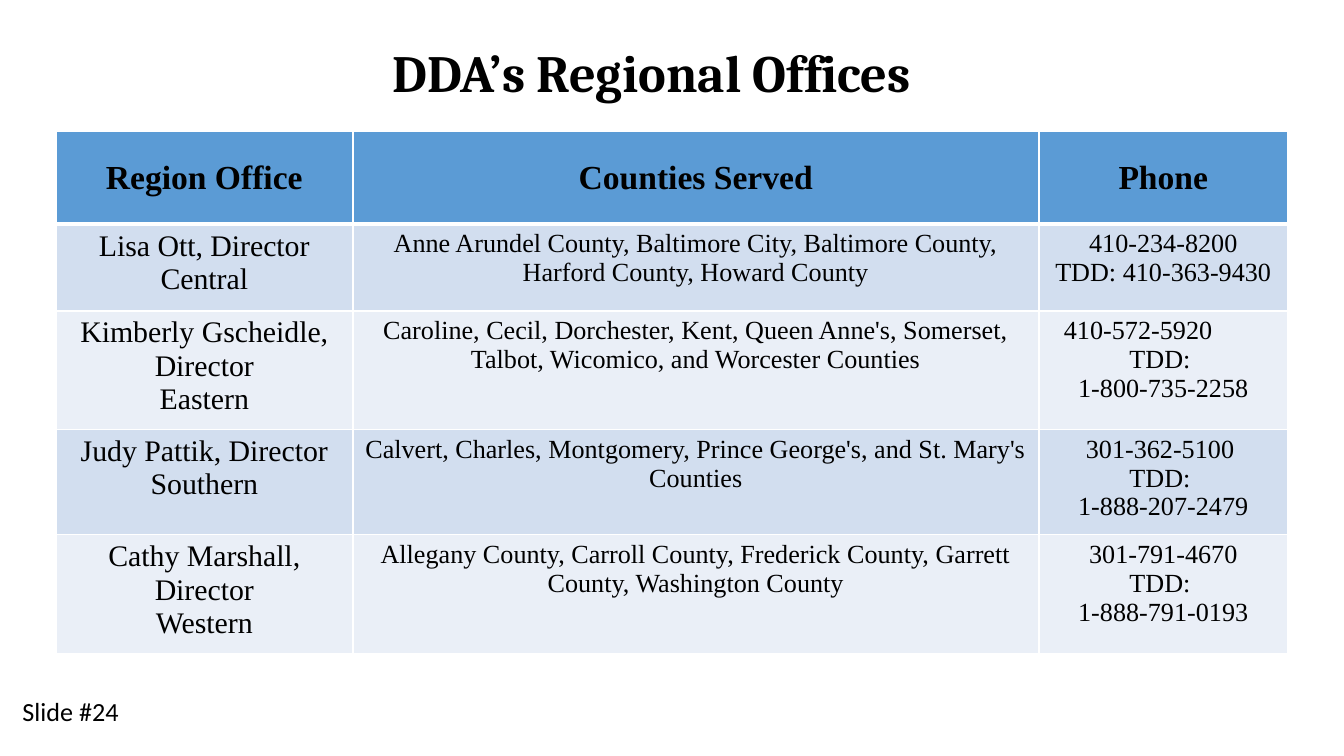
from lxml import etree
from pptx import Presentation
from pptx.dml.color import RGBColor
from pptx.enum.text import MSO_ANCHOR, PP_ALIGN
from pptx.oxml import parse_xml
from pptx.oxml.ns import nsdecls, qn
from pptx.util import Pt

PX = 9525  # 96 px to the inch
INSET_X, INSET_Y = 7 * PX, 4 * PX


def color(hex_text):
    return RGBColor.from_string(hex_text)


def write(frame, lines, size, font, bold=False, align=PP_ALIGN.CENTER):
    """Fill a text frame with one paragraph per line, all in one style."""
    frame.word_wrap = True
    frame.text = "\n".join(lines)
    for para in frame.paragraphs:
        para.alignment = align
        for span in para.runs:
            span.font.size = Pt(size)
            span.font.name = font
            span.font.bold = bold
            span.font.color.rgb = color("000000")
        end = etree.SubElement(para._p, qn("a:endParaRPr"), sz=str(size * 100))
        etree.SubElement(end, qn("a:latin"), typeface=font)


deck = Presentation()
deck.slide_width = 960 * PX
deck.slide_height = 540 * PX
page = deck.slides.add_slide(deck.slide_layouts[6])

# Title and slide label
labels = [
    ("DDA’s Regional Offices", (72, 30, 787, 50), 28, "Cambria", True,
     PP_ALIGN.CENTER, MSO_ANCHOR.TOP),
    ("Slide #24", (9, 489, 112, 38), 14, "Calibri", False,
     PP_ALIGN.LEFT, MSO_ANCHOR.MIDDLE),
]
for text, place, size, font, bold, align, anchor in labels:
    box = page.shapes.add_textbox(*[length * PX for length in place])
    frame = box.text_frame
    frame.margin_left = frame.margin_right = INSET_X
    frame.margin_top = frame.margin_bottom = INSET_Y
    frame.vertical_anchor = anchor
    write(frame, [text], size, font, bold, align)
    if bold:
        frame.paragraphs[0].line_spacing = 0.9

# Regional offices table: each cell is a list of lines
offices = [
    (["Region Office"], ["Counties Served"], ["Phone"]),
    (["Lisa Ott, Director", "Central"],
     ["Anne Arundel County, Baltimore City, Baltimore County, "
      "Harford County, Howard County"],
     ["410-234-8200", "TDD: 410-363-9430"]),
    (["Kimberly Gscheidle, Director", "Eastern"],
     ["Caroline, Cecil, Dorchester, Kent, Queen Anne's, Somerset, "
      "Talbot, Wicomico, and Worcester Counties"],
     ["410-572-5920", "TDD: ", "1-800-735-2258"]),
    (["Judy Pattik, Director", "Southern"],
     ["Calvert, Charles, Montgomery, Prince George's, and St. Mary's Counties"],
     ["301-362-5100 ", "TDD: ", "1-888-207-2479"]),
    (["Cathy Marshall, Director", "Western"],
     ["Allegany County, Carroll County, Frederick County, "
      "Garrett County, Washington County"],
     ["301-791-4670", "TDD: ", "1-888-791-0193"]),
]
column_widths = [212, 490, 178]
row_heights = [66, 62, 72, 66, 66]
body_sizes = [16, 14, 14]
band_fills = ["EAEFF7", "D2DEEF"]
header_borders = {"lnL": 1, "lnR": 1, "lnT": 1, "lnB": 3}

table_frame = page.shapes.add_table(
    len(offices), len(column_widths), 40 * PX, 94 * PX,
    sum(column_widths) * PX, sum(row_heights) * PX)
table = table_frame.table
for column, width in zip(table.columns, column_widths):
    column.width = width * PX
for row, height in zip(table.rows, row_heights):
    row.height = height * PX
table_frame.height = 370 * PX

for row_index, office in enumerate(offices):
    header = row_index == 0
    for column_index, lines in enumerate(office):
        cell = table.cell(row_index, column_index)
        cell.margin_left = cell.margin_right = INSET_X
        cell.margin_top = cell.margin_bottom = INSET_Y
        cell.vertical_anchor = MSO_ANCHOR.MIDDLE if header else MSO_ANCHOR.TOP
        cell.fill.solid()
        cell.fill.fore_color.rgb = color(
            "5B9BD5" if header else band_fills[row_index % 2])
        write(cell.text_frame, lines, 18 if header else body_sizes[column_index],
              "Times New Roman", header)
        if header:
            for position, (side, points) in enumerate(header_borders.items()):
                cell._tc.get_or_add_tcPr().insert(position, parse_xml(
                    f'<a:{side} {nsdecls("a")} w="{Pt(points)}"><a:solidFill>'
                    f'<a:srgbClr val="FFFFFF"/></a:solidFill></a:{side}>'))

# The Eastern phone number sits left of its column's centre
eastern_phone = table.cell(2, 2).text_frame.paragraphs[0]
eastern_phone.alignment = PP_ALIGN.LEFT
eastern_phone._p.get_or_add_pPr().set("marL", str(11 * PX))

deck.save("out.pptx")
